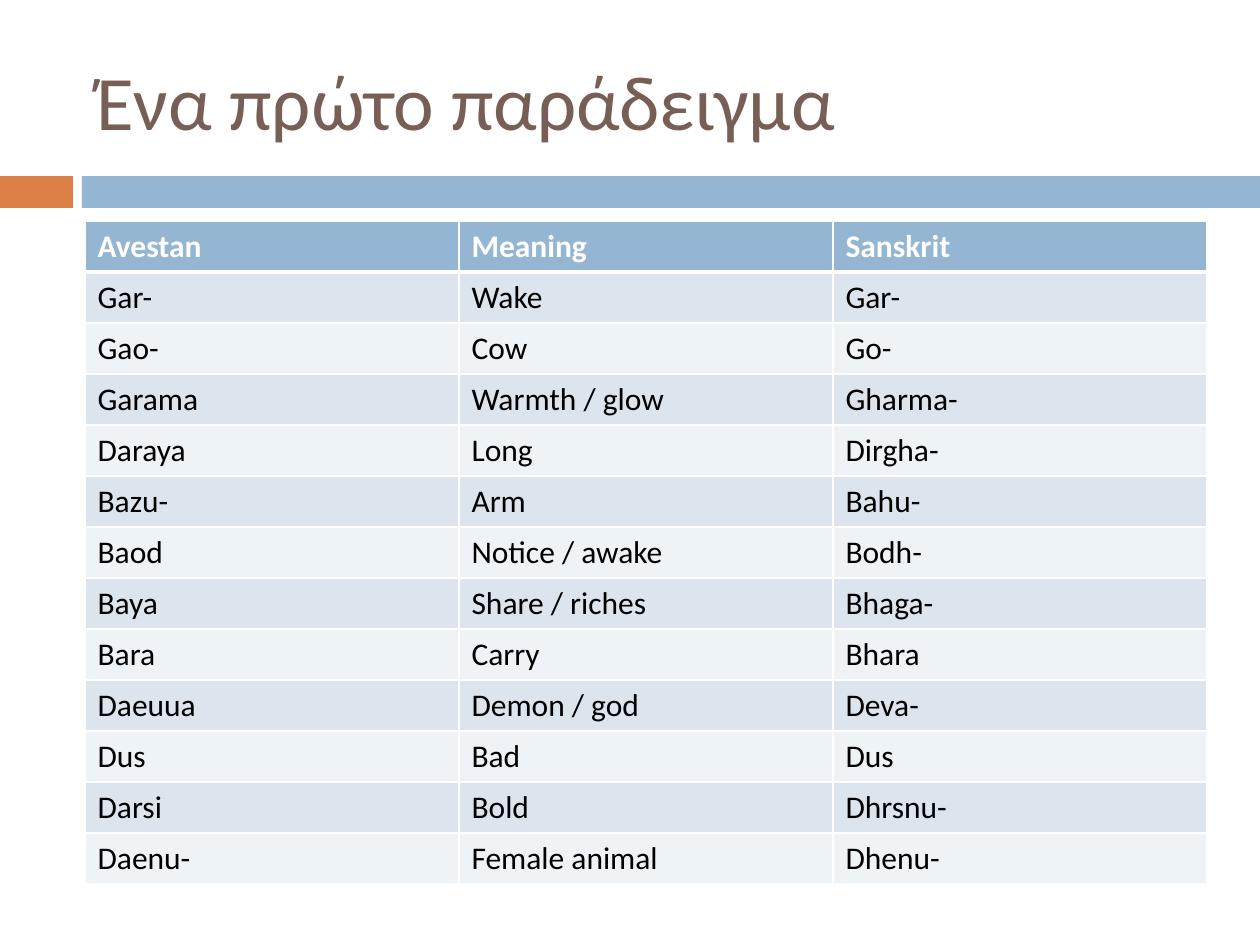
"""Build a slide comparing Avestan and Sanskrit words in a table."""
from dataclasses import dataclass

from lxml import etree
from pptx import Presentation
from pptx import util as u
from pptx.dml.color import RGBColor
from pptx.enum import shapes, text
from pptx.oxml.ns import qn

SCALE = 914400 / 126


@dataclass(frozen=True)
class Theme:
    font: str = "Calibri"
    title: str = "775F55"
    accent: str = "DD8047"
    head: str = "94B6D2"
    odd: str = "DCE5EE"
    even: str = "EEF3F7"
    ink: str = "000000"
    white: str = "FFFFFF"
    big: int = 44
    body: int = 18


WORDS = [
    ("Avestan", "Meaning", "Sanskrit"),
    ("Gar-", "Wake", "Gar-"),
    ("Gao-", "Cow", "Go-"),
    ("Garama", "Warmth / glow", "Gharma-"),
    ("Daraya", "Long", "Dirgha-"),
    ("Bazu-", "Arm", "Bahu-"),
    ("Baod", "Notice / awake", "Bodh-"),
    ("Baya", "Share / riches", "Bhaga-"),
    ("Bara", "Carry", "Bhara"),
    ("Daeuua", "Demon / god", "Deva-"),
    ("Dus", "Bad", "Dus"),
    ("Darsi", "Bold", "Dhrsnu-"),
    ("Daenu-", "Female animal", "Dhenu-"),
]


def px(*nums):
    return [u.Emu(round(n * SCALE)) for n in nums]


def write(frame, words, *, font, size, color, bold=False):
    run = frame.paragraphs[0].add_run()
    run.text = words
    run.font.name = font
    run.font.size = u.Pt(size)
    run.font.bold = bold
    run.font.color.rgb = RGBColor.from_string(color)


def border(cell, color, **sides):
    props = cell._tc.get_or_add_tcPr()
    for side in "LRTB":
        width = u.Pt(sides.get(side, 1))
        line = etree.SubElement(props, qn(f"a:ln{side}"), w=str(width))
        fill = etree.SubElement(line, qn("a:solidFill"))
        etree.SubElement(fill, qn("a:srgbClr"), val=color)


class Deck:
    def __init__(self, theme):
        self.theme = theme
        self.file = Presentation()
        self.file.slide_width, self.file.slide_height = px(1260, 945)
        self.slide = self.file.slides.add_slide(self.file.slide_layouts[6])

    def bar(self, box, color):
        bar = self.slide.shapes.add_shape(shapes.MSO_SHAPE.RECTANGLE, *px(*box))
        bar.shadow.inherit = False
        bar.fill.solid()
        bar.fill.fore_color.rgb = RGBColor.from_string(color)
        bar.line.fill.background()

    def title(self, box, words):
        frame = self.slide.shapes.add_textbox(*px(*box)).text_frame
        frame.word_wrap = True
        frame.vertical_anchor = text.MSO_ANCHOR.MIDDLE
        look = self.theme
        write(frame, words, font=look.font, size=look.big, color=look.title)

    def table(self, left, top, wide, high, rows):
        count, cols = len(rows), len(rows[0])
        box = px(left, top, wide * cols, high * count)
        grid = self.slide.shapes.add_table(count, cols, *box).table
        for col in grid.columns:
            col.width = px(wide)[0]
        for r, words in enumerate(rows):
            grid.rows[r].height = px(high)[0]
            for c, word in enumerate(words):
                self.cell(grid.cell(r, c), r, word)

    def cell(self, cell, row, word):
        look = self.theme
        head = row == 0
        border(cell, look.white, T=3 if row == 1 else 1, B=3 if head else 1)
        tone = look.head if head else look.odd if row % 2 else look.even
        cell.fill.solid()
        cell.fill.fore_color.rgb = RGBColor.from_string(tone)
        write(cell.text_frame, word, font=look.font, size=look.body,
              color=look.white if head else look.ink, bold=head)

    def save(self):
        self.file.save("out.pptx")


def main():
    theme = Theme()
    deck = Deck(theme)
    deck.bar((0, 176, 73, 32), theme.accent)
    deck.bar((82, 176, 1178, 32), theme.head)
    deck.title((84, 32, 1124, 136), "Ένα πρώτο παράδειγμα")
    deck.table(85, 221, 374, 51, WORDS)
    deck.save()


if __name__ == "__main__":
    main()
